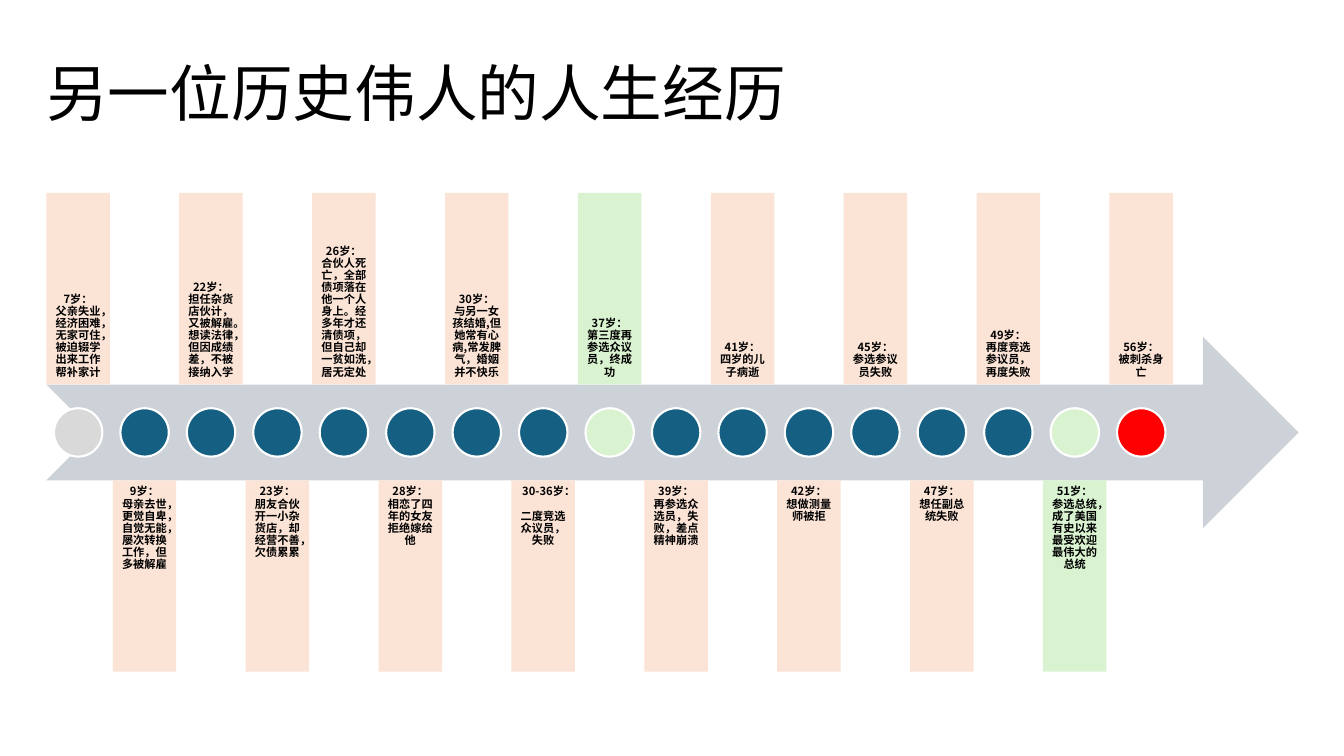
"""Build a timeline slide with alternating event columns along an arrow."""
from copy import deepcopy

from pptx import Presentation
from pptx.dml.color import RGBColor
from pptx.enum.shapes import MSO_SHAPE as SHAPE
from pptx.enum.text import MSO_ANCHOR as ANCHOR, MSO_AUTO_SIZE as AUTO, PP_ALIGN as ALIGN
from pptx.oxml.ns import qn
from pptx.util import Inches, Pt

FONT = "Noto Sans CJK SC"
BLACK = RGBColor(0x00, 0x00, 0x00)
WHITE = RGBColor(0xFF, 0xFF, 0xFF)
ARROW = RGBColor(0xCC, 0xD2, 0xD8)
PEACH = RGBColor(0xFB, 0xE3, 0xD6)
GREEN = RGBColor(0xD9, 0xF2, 0xD0)
BLUE = RGBColor(0x15, 0x60, 0x82)
GREY = RGBColor(0xD9, 0xD9, 0xD9)
RED = RGBColor(0xFF, 0x00, 0x00)

LEFT, BAND_W, BAND_H = 0.46, 0.63, 1.9
ARROW_TOP, ARROW_W = 3.34, 12.42
MIDDLE = ARROW_TOP + BAND_H / 2
PITCH = 0.659
DOT = 0.48

EVENTS = [
    ("7岁", "父亲失业，经济困难，无家可住，被迫辍学出来工作帮补家计", PEACH, GREY),
    ("9岁", "母亲去世，更觉自卑，自觉无能，屡次转换工作，但多被解雇", PEACH, BLUE),
    ("22岁", "担任杂货店伙计，又被解雇。想读法律，但因成绩差，不被接纳入学", PEACH, BLUE),
    ("23岁", "朋友合伙开一小杂货店，却经营不善，欠债累累", PEACH, BLUE),
    ("26岁", "合伙人死亡，全部债项落在他一个人身上。经多年才还清债项，但自己却一贫如洗，居无定处",
     PEACH, BLUE),
    ("28岁", "相恋了四年的女友拒绝嫁给他", PEACH, BLUE),
    ("30岁", "与另一女孩结婚,但她常有心病,常发脾气，婚姻并不快乐", PEACH, BLUE),
    ("30-36岁", "二度竞选众议员，失败", PEACH, BLUE),
    ("37岁", "第三度再参选众议员，终成功", GREEN, GREEN),
    ("39岁", "再参选众选员，失败，差点精神崩溃", PEACH, BLUE),
    ("41岁", "四岁的儿子病逝", PEACH, BLUE),
    ("42岁", "想做测量师被拒", PEACH, BLUE),
    ("45岁", "参选参议员失败", PEACH, BLUE),
    ("47岁", "想任副总统失败", PEACH, BLUE),
    ("49岁", "再度竞选参议员，再度失败", PEACH, BLUE),
    ("51岁", "参选总统，成了美国有史以来最受欢迎最伟大的总统", GREEN, GREEN),
    ("56岁", "被刺杀身亡", PEACH, RED),
]


def set_attrs(obj, **values):
    """Set every given attribute on an object."""
    for name, value in values.items():
        setattr(obj, name, value)


def write(tf, text, size, bold, align, anchor, inset_x, inset_y):
    """Write one formatted paragraph into a text frame."""
    set_attrs(tf, word_wrap=True, auto_size=AUTO.NONE, vertical_anchor=anchor,
              margin_left=Inches(inset_x), margin_right=Inches(inset_x),
              margin_top=Inches(inset_y), margin_bottom=Inches(inset_y))
    p = tf.paragraphs[0]
    p.text = text
    set_attrs(p, alignment=align, line_spacing=0.9)
    for r in p.runs:
        set_attrs(r.font, name=FONT, size=Pt(size), bold=bold)
        r.font.color.rgb = BLACK
        props = r.font._element
        latin = props.find(qn("a:latin"))
        ea = props.makeelement(qn("a:ea"), {"typeface": FONT})
        latin.addnext(ea)
    for br in p._p.findall(qn("a:br")):
        br.append(deepcopy(p.runs[0].font._element))


def add_shape(slide, kind, left, top, width, height, fill, line=None):
    """Add a flat filled shape with an optional outline."""
    sp = slide.shapes.add_shape(kind, *map(Inches, (left, top, width, height)))
    sp.shadow.inherit = False
    sp.fill.solid()
    sp.fill.fore_color.rgb = fill
    if line is None:
        sp.line.fill.background()
    else:
        sp.line.color.rgb = line
        sp.line.width = Pt(1.5)
    return sp


def add_title(slide, text):
    """Place and fill the title placeholder."""
    title = slide.shapes.title
    set_attrs(title, left=Inches(0.36), top=Inches(0.23),
              width=Inches(11.5), height=Inches(1.45))
    write(title.text_frame, text, 44, False, ALIGN.LEFT, ANCHOR.MIDDLE, 0.1, 0.05)


def add_event(slide, index, age, story, fill, dot_fill):
    """Add one event column and its dot, above or below the arrow by turn."""
    left = LEFT + index * PITCH
    above = index % 2 == 0
    top = MIDDLE - BAND_H / 4 - BAND_H if above else MIDDLE + BAND_H / 4
    band = add_shape(slide, SHAPE.RECTANGLE, left, top, BAND_W, BAND_H, fill)
    write(band.text_frame, f"{age}：\v{story}", 8, True, ALIGN.CENTER,
          ANCHOR.BOTTOM if above else ANCHOR.TOP, 0.06, 0.06)
    add_shape(slide, SHAPE.OVAL, left + (BAND_W - DOT) / 2, MIDDLE - DOT / 2,
              DOT, DOT, dot_fill, WHITE)


def main():
    """Build and save the slide."""
    prs = Presentation()
    set_attrs(prs, slide_width=Inches(13.33), slide_height=Inches(7.5))
    s = prs.slides.add_slide(prs.slide_layouts[5])
    add_title(s, "另一位历史伟人的人生经历")
    add_shape(s, SHAPE.NOTCHED_RIGHT_ARROW, LEFT, ARROW_TOP, ARROW_W, BAND_H, ARROW)
    for index, event in enumerate(EVENTS):
        add_event(s, index, *event)
    prs.save("out.pptx")


if __name__ == "__main__":
    main()
